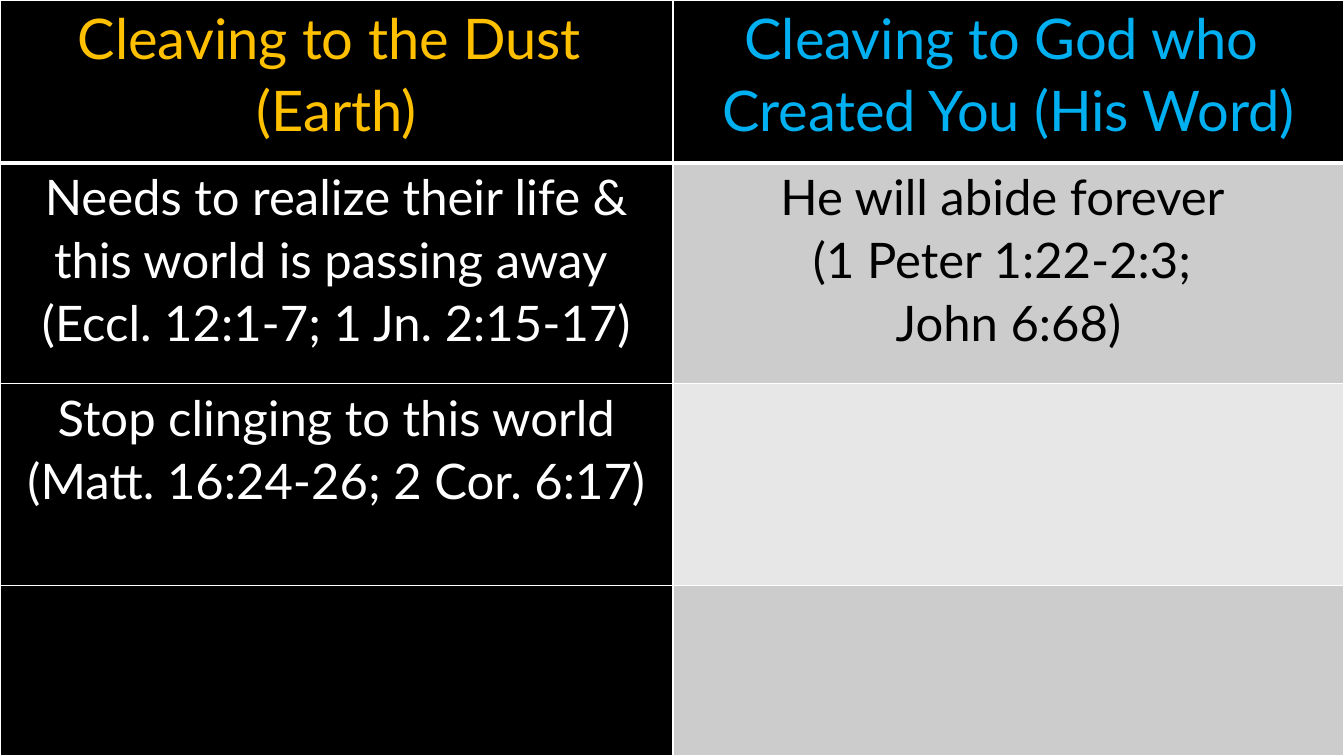
from dataclasses import dataclass

from lxml.etree import SubElement
from pptx import Presentation
from pptx.dml.color import RGBColor as RGB
from pptx.enum.text import PP_ALIGN as Align
from pptx.oxml.ns import qn
from pptx.table import _Cell as Cell
from pptx.util import Cm, Pt

BLACK = RGB(0x00, 0x00, 0x00)
WHITE = RGB(0xFF, 0xFF, 0xFF)
GOLD = RGB(0xFF, 0xC0, 0x00)
BLUE = RGB(0x00, 0xB0, 0xF0)
GRAY = RGB(0xCC, 0xCC, 0xCC)
PALE = RGB(0xE7, 0xE7, 0xE7)

WIDE, HIGH = Cm(33.87), Cm(19.05)
COLS = (16.96, 16.91)
ROWS = (4.11, 5.56, 5.08, 4.3)
THIN, THICK = Pt(1), Pt(3)


@dataclass
class Entry:
    fill: RGB
    color: RGB = WHITE
    lines: tuple[str, ...] = ()


GRID = (
    (
        Entry(BLACK, GOLD, ("Cleaving to the Dust ", "(Earth)")),
        Entry(BLACK, BLUE, ("Cleaving to God who ", "Created You (His Word)")),
    ),
    (
        Entry(BLACK, WHITE, (
            "Needs to realize their life & this world is passing away ",
            "(Eccl. 12:1-7; 1 Jn. 2:15-17)",
        )),
        Entry(GRAY, BLACK, (
            "He will abide forever ",
            "(1 Peter 1:22-2:3; ",
            "John 6:68)",
        )),
    ),
    (
        Entry(BLACK, WHITE, (
            "Stop clinging to this world",
            "(Matt. 16:24-26; 2 Cor. 6:17)",
        )),
        Entry(PALE),
    ),
    (Entry(BLACK), Entry(GRAY)),
)


def set_edges(cell: Cell, top: int, bottom: int) -> None:
    """Rule all four sides of a cell in white."""
    props = cell._tc.get_or_add_tcPr()
    sides = {"lnL": THIN, "lnR": THIN, "lnT": top, "lnB": bottom}
    for side, width in sides.items():
        line = SubElement(props, qn(f"a:{side}"), w=str(int(width)))
        fill = SubElement(line, qn("a:solidFill"))
        SubElement(fill, qn("a:srgbClr"), val=str(WHITE))


def fill_cell(cell: Cell, entry: Entry, size: int) -> None:
    """Colour a cell and write its centred lines."""
    cell.fill.solid()
    cell.fill.fore_color.rgb = entry.fill
    cell.margin_left = cell.margin_right = Cm(0.18)
    cell.margin_top = cell.margin_bottom = 0
    cell.text = "\n".join(entry.lines)
    for para in cell.text_frame.paragraphs:
        para.alignment = Align.CENTER
        para.line_spacing = 1.07
        font = para.font
        font.name, font.size, font.bold = "Lato", Pt(size), False
        font.color.rgb = entry.color


def main() -> None:
    deck = Presentation()
    deck.slide_width, deck.slide_height = WIDE, HIGH
    slide = deck.slides.add_slide(deck.slide_layouts[6])
    back = slide.background.fill
    back.solid()
    back.fore_color.rgb = BLACK

    # Table frame
    frame = slide.shapes.add_table(len(ROWS), len(COLS), 0, 0, WIDE, HIGH)
    table = frame.table
    table.horz_banding = False
    for col, width in zip(table.columns, COLS):
        col.width = Cm(width)
    for row, height in zip(table.rows, ROWS):
        row.height = Cm(height)

    # Cells, with a thick rule under the header
    for r, line in enumerate(GRID):
        for c, entry in enumerate(line):
            cell = table.cell(r, c)
            set_edges(cell, THICK if r == 1 else THIN, THICK if r == 0 else THIN)
            fill_cell(cell, entry, 40 if r == 0 else 35)

    deck.save("out.pptx")


if __name__ == "__main__":
    main()
